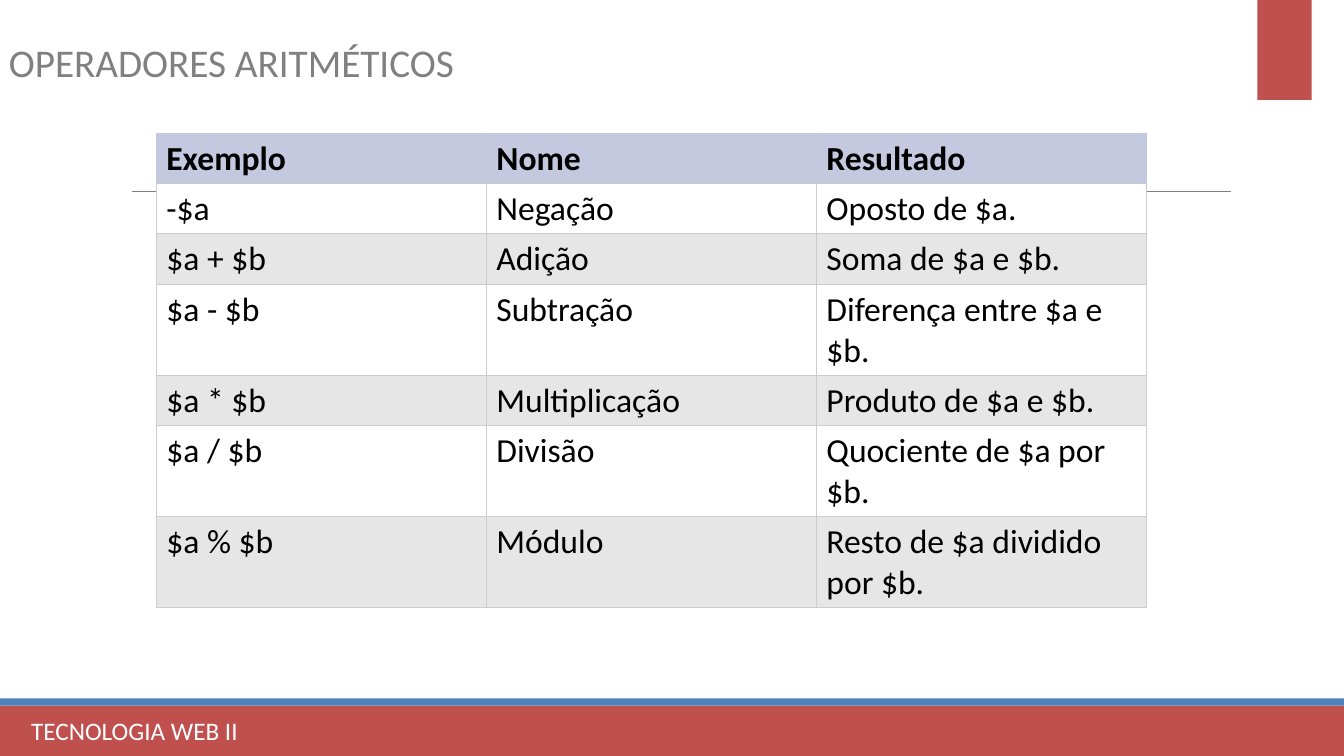
from dataclasses import dataclass

from lxml.etree import SubElement
from pptx import Presentation
from pptx.dml.color import RGBColor
from pptx.enum.shapes import MSO_CONNECTOR, MSO_SHAPE
from pptx.oxml.ns import qn
from pptx.util import Inches, Pt


@dataclass(frozen=True)
class Theme:
    font: str = "Calibri"
    red: str = "C0504D"
    blue: str = "4F81BD"
    gray: str = "808080"
    white: str = "FFFFFF"
    black: str = "000000"
    head: str = "C4C9DF"
    band: str = "E6E6E6"
    grid: str = "CCCCCC"
    title: int = 28
    body: int = 24
    foot: int = 18


THEME = Theme()

ROWS = [
    ("Exemplo", "Nome", "Resultado"),
    ("-$a", "Negação", "Oposto de $a."),
    ("$a + $b", "Adição", "Soma de $a e $b."),
    ("$a - $b", "Subtração", "Diferença entre $a e $b."),
    ("$a * $b", "Multiplicação", "Produto de $a e $b."),
    ("$a / $b", "Divisão", "Quociente de $a por $b."),
    ("$a % $b", "Módulo", "Resto de $a dividido por $b."),
]
TALL = (3, 5, 6)  # rows whose result takes two lines


def write(frame, text, size, color, bold=False):
    frame.word_wrap = True
    run = frame.paragraphs[0].add_run()
    run.text = text
    font = run.font
    font.name, font.size, font.bold = THEME.font, Pt(size), bold
    font.color.rgb = RGBColor.from_string(color)


def label(slide, box, text, **style):
    shape = slide.shapes.add_textbox(*map(Inches, box))
    write(shape.text_frame, text, **style)


def bar(slide, box, color):
    shape = slide.shapes.add_shape(MSO_SHAPE.RECTANGLE, *map(Inches, box))
    shape.shadow.inherit = False
    shape.fill.solid()
    shape.fill.fore_color.rgb = RGBColor.from_string(color)
    shape.line.fill.background()


def rule(slide, ends, color, width):
    line = slide.shapes.add_connector(MSO_CONNECTOR.STRAIGHT, *map(Inches, ends))
    line.line.color.rgb = RGBColor.from_string(color)
    line.line.width = Pt(width)
    SubElement(line._element.spPr, qn("a:effectLst"))


def edge(cell, side, color):
    line = SubElement(cell._tc.get_or_add_tcPr(), qn(f"a:ln{side}"), w=str(Pt(0.75)))
    fill = SubElement(line, qn("a:solidFill"))
    SubElement(fill, qn("a:srgbClr"), val=color)


def paint(cell, text, row):
    top = row == 0
    # Borders come before the fill in the cell's XML
    for side in "LRTB":
        edge(cell, side, THEME.head if top and side != "B" else THEME.grid)
    fill = THEME.head if top else (THEME.band, THEME.white)[row % 2]
    cell.fill.solid()
    cell.fill.fore_color.rgb = RGBColor.from_string(fill)
    write(cell.text_frame, text, THEME.body, THEME.black, bold=top)


def grid(slide, box, rows):
    frame = slide.shapes.add_table(len(rows), len(rows[0]), *map(Inches, box))
    table = frame.table
    for i, texts in enumerate(rows):
        table.rows[i].height = Inches(0.77 if i in TALL else 0.43)
        for j, text in enumerate(texts):
            paint(table.cell(i, j), text, i)


def main():
    deck = Presentation()
    deck.slide_width, deck.slide_height = Inches(13.33), Inches(7.5)
    slide = deck.slides.add_slide(deck.slide_layouts[6])

    # Frame of the page
    rule(slide, (1.31, 1.9, 12.21, 1.9), THEME.gray, 0.5)
    bar(slide, (0, 7, 13.33, 0.5), THEME.red)
    bar(slide, (0, 6.93, 13.33, 0.07), THEME.blue)
    bar(slide, (12.47, 0, 0.54, 0.99), THEME.red)
    label(slide, (0.21, 7.05, 7.11, 0.4), "TECNOLOGIA WEB II",
          size=THEME.foot, color=THEME.white)

    # Table of operators
    grid(slide, (1.55, 1.32, 9.82, 3.61), ROWS)

    # Title
    label(slide, (-0.01, 0.33, 5.63, 0.57), "OPERADORES ARITMÉTICOS",
          size=THEME.title, color=THEME.gray)

    deck.save("out.pptx")


if __name__ == "__main__":
    main()
